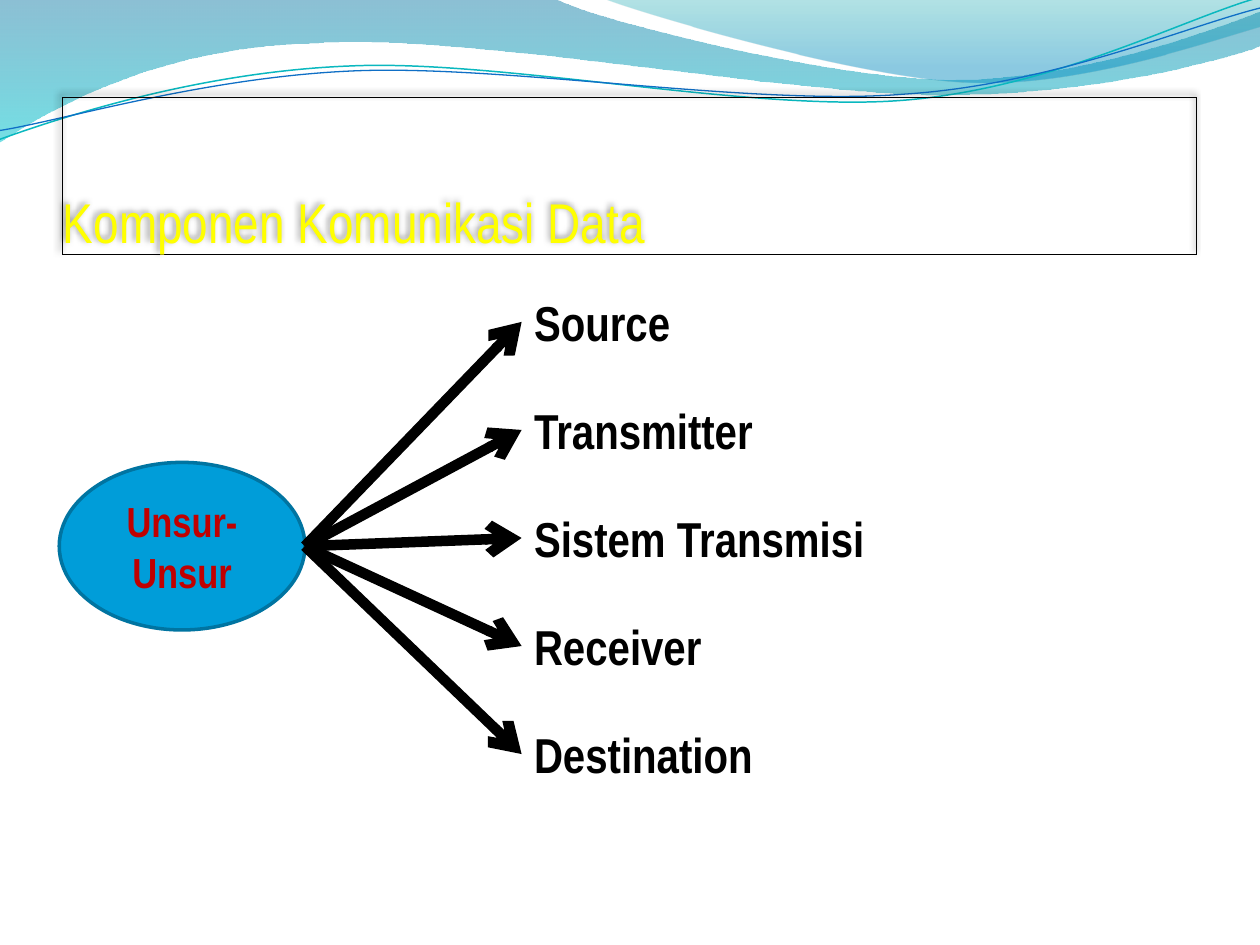
from lxml.etree import SubElement
from pptx import Presentation
from pptx.dml.color import RGBColor
from pptx.enum.shapes import MSO_CONNECTOR, MSO_SHAPE
from pptx.enum.text import MSO_ANCHOR, MSO_AUTO_SIZE, PP_ALIGN
from pptx.oxml.ns import qn
from pptx.util import Inches, Pt

FONT = "Arial Narrow"
COLORS = {
    "black": "000000", "title": "FFFF00", "hub_text": "C00000",
    "hub": "009DD9", "hub_line": "0074A1",
    "deep": "0074A1", "cyan": "00C6CF", "teal": "00A1A9", "blue": "008BBF",
    "teal_line": "0AB8BF", "blue_line": "0F6FC6",
}
# Component names and the widths of their labels
COMPONENTS = [("Source", 1.42), ("Transmitter", 2.32), ("Sistem Transmisi", 3.33),
              ("Receiver", 1.75), ("Destination", 2.32)]

# Outlines: a start point, then points (2 numbers) or Bezier curves (6 numbers)
LEFT_WAVE = [
    (0, 0), (4.4, -0.01), (4.76, 0.17, 6.64, 0.63, 7.58, 0.63),
    (8.53, 0.63, 9.58, 0.26, 10, 0.09), (10.01, 0.36),
    (9.83, 0.44, 8.7, 0.76, 7.46, 0.75), (6.22, 0.75, 3.82, 0.28, 2.57, 0.34),
    (1.29, 0.36, 0.46, 0.83, -0.01, 1.13), (0, 0),
]
RIGHT_WAVE = [
    (4.79, -0.01), (5.09, 0.11, 6.82, 0.62, 7.69, 0.65),
    (8.56, 0.69, 9.61, 0.32, 10, 0.21), (10, 0), (4.79, -0.01),
]
TEAL_CURVE = [
    (-0.02, 0.87), (0.47, 0.72, 1.58, 0.41, 2.78, 0.42),
    (3.96, 0.42, 5.91, 0.93, 7.12, 0.9), (8.32, 0.87, 9.4, 0.36, 10, 0.22),
]
BLUE_CURVE = [
    (-0.02, 0.8), (0.46, 0.75, 1.64, 0.45, 2.83, 0.46),
    (4.03, 0.47, 5.96, 0.89, 7.16, 0.85), (8.35, 0.83, 9.42, 0.42, 10.02, 0.3),
]
CURVE_ROTATION = 357.3


def rgb(name):
    return RGBColor.from_string(COLORS[name])


def set_text(tf, text, size, color, bold=False):
    p = tf.paragraphs[0]
    p.text = text
    p.font.name, p.font.size, p.font.bold = FONT, Pt(size), bold
    p.font.color.rgb = rgb(color)
    return p


def add_outline(slide, left, top, outline, close):
    """Build a freeform through the end points, then bend its curved segments."""
    ends = [(Inches(left + part[-2]), Inches(top + part[-1])) for part in outline]
    builder = slide.shapes.build_freeform(*ends[0])
    builder.add_line_segments(ends[1:], close=close)
    s = builder.convert_to_shape()
    s.shadow.inherit = False
    segments = list(s._element.spPr.iter(qn("a:lnTo")))
    for segment, part in zip(segments, outline[1:]):
        if len(part) == 6:
            segment.tag = qn("a:cubicBezTo")
            segment.remove(segment[0])
            for x, y in zip(part[::2], part[1::2]):
                SubElement(segment, qn("a:pt"), x=str(Inches(left + x) - s.left),
                           y=str(Inches(top + y) - s.top))
    return s


def add_wave(slide, left, top, outline, stops):
    """Draw a wave with a downward gradient of (position, color, opacity) stops."""
    s = add_outline(slide, left, top, outline, True)
    s.line.fill.background()
    s.fill.gradient()
    s.fill.gradient_angle = 270
    for stop, (position, color, _) in zip(s.fill.gradient_stops, stops):
        stop.position = position
        stop.color.rgb = rgb(color)
    colors = list(s._element.spPr.iter(qn("a:srgbClr")))
    for clr, (_, _, opacity) in zip(colors, stops):
        SubElement(clr, qn("a:alpha"), val=str(opacity * 1000))


def add_curve(slide, left, top, outline, color, width):
    s = add_outline(slide, left, top, outline, False)
    s.rotation = CURVE_ROTATION
    s.fill.background()
    s.line.color.rgb = rgb(color)
    s.line.width = Pt(width)


def add_header_waves(slide, left, top):
    add_wave(slide, left, top, LEFT_WAVE, [(0, "deep", 45), (1, "cyan", 55)])
    add_wave(slide, left, top, RIGHT_WAVE, [(0, "teal", 30), (0.8, "blue", 45)])
    add_curve(slide, left, top, TEAL_CURVE, "teal_line", 0.85)
    add_curve(slide, left, top, BLUE_CURVE, "blue_line", 0.75)


def add_title(slide, left, top, width, height):
    s = slide.shapes.add_textbox(Inches(left), Inches(top), Inches(width), Inches(height))
    s.line.color.rgb = rgb("black")
    s.shadow.inherit = False
    effects = s._element.spPr.find(qn("a:effectLst"))
    shadow = SubElement(effects, qn("a:outerShdw"), blurRad=str(Pt(4)), dist=str(Pt(3)),
                        dir=str(225 * 60000), algn="br", rotWithShape="0")
    clr = SubElement(shadow, qn("a:srgbClr"), val=COLORS["black"])
    SubElement(clr, qn("a:alpha"), val="40000")
    tf = s.text_frame
    tf.word_wrap = True
    tf.vertical_anchor = MSO_ANCHOR.BOTTOM
    tf.margin_left = tf.margin_right = tf.margin_bottom = 0
    tf.margin_top = Inches(0.05)
    set_text(tf, "Komponen Komunikasi Data", 32, "title")


def add_hub(slide, left, top, width, height):
    s = slide.shapes.add_shape(MSO_SHAPE.OVAL, Inches(left), Inches(top),
                               Inches(width), Inches(height))
    s.shadow.inherit = False
    s.fill.solid()
    s.fill.fore_color.rgb = rgb("hub")
    s.line.color.rgb = rgb("hub_line")
    s.line.width = Pt(2)
    s.text_frame.word_wrap = True
    s.text_frame.vertical_anchor = MSO_ANCHOR.MIDDLE
    p = set_text(s.text_frame, "Unsur-Unsur", 24, "hub_text", True)
    p.alignment = PP_ALIGN.CENTER


def add_arrow(slide, x1, y1, x2, y2):
    c = slide.shapes.add_connector(MSO_CONNECTOR.STRAIGHT, Inches(x1), Inches(y1),
                                   Inches(x2), Inches(y2))
    c.line.color.rgb = rgb("black")
    c.line.width = Pt(6)
    SubElement(c.line._get_or_add_ln(), qn("a:tailEnd"), type="arrow")
    SubElement(c._element.spPr, qn("a:effectLst"))


def add_label(slide, left, top, width, height, text):
    s = slide.shapes.add_textbox(Inches(left), Inches(top), Inches(width), Inches(height))
    s.text_frame.word_wrap = False
    s.text_frame.auto_size = MSO_AUTO_SIZE.SHAPE_TO_FIT_TEXT
    set_text(s.text_frame, text, 28, "black", True)


def add_component_diagram(slide, left, top, height):
    """Draw the hub at the left with an arrow to each component label."""
    hub_w, hub_h, hub_top = 1.95, 1.33, 1.4
    label_left, label_h = left + 3.67, 0.57
    pitch = (height - label_h) / (len(COMPONENTS) - 1)
    add_hub(slide, left, top + hub_top, hub_w, hub_h)
    for i, (name, label_w) in enumerate(COMPONENTS):
        y = top + i * pitch
        add_arrow(slide, left + hub_w, top + hub_top + hub_h / 2,
                  label_left, y + label_h / 2)
        add_label(slide, label_left, y, label_w, label_h, name)


def main():
    prs = Presentation()
    prs.slide_width, prs.slide_height = Inches(10), Inches(7.5)
    slide = prs.slides.add_slide(prs.slide_layouts[6])
    add_header_waves(slide, 0, 0)
    add_title(slide, 0.5, 0.77, 9, 1.25)
    add_component_diagram(slide, 0.47, 2.27, 4)
    prs.save("out.pptx")


if __name__ == "__main__":
    main()
